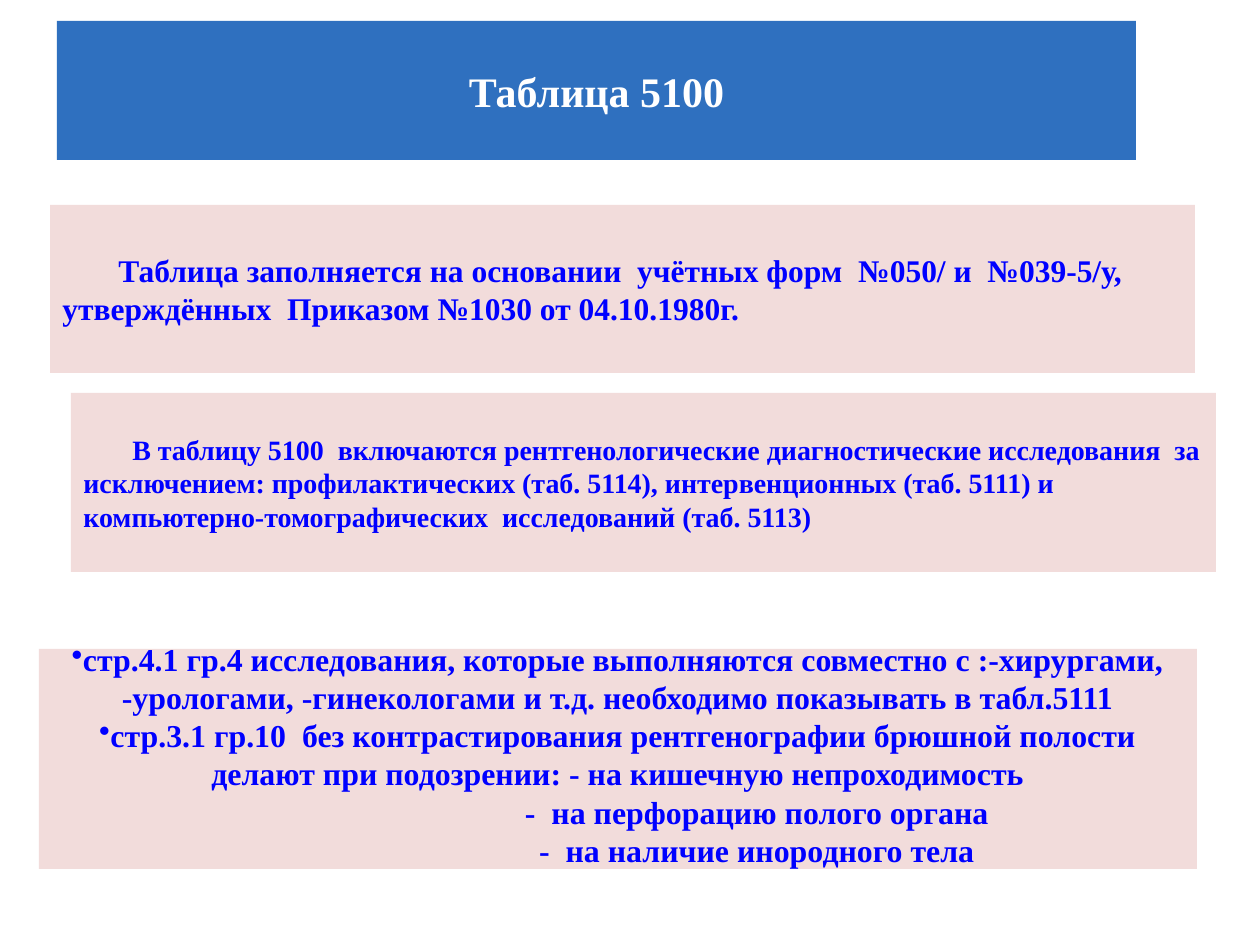
"""Build the slide about filling in table 5100."""
from lxml import etree
from pptx import Presentation
from pptx.dml.color import RGBColor
from pptx.enum.shapes import MSO_SHAPE
from pptx.enum.text import MSO_ANCHOR, PP_ALIGN
from pptx.oxml.ns import qn
from pptx.util import Pt

PX = 914400 // 126
RECTANGLE = MSO_SHAPE.RECTANGLE
MIDDLE = MSO_ANCHOR.MIDDLE
LEFT, CENTER = PP_ALIGN.LEFT, PP_ALIGN.CENTER
FONT = "Times New Roman"
BLUE, PINK, WHITE, TEXT_BLUE = "2F70BF", "F2DCDB", "FFFFFF", "0000FF"


def paint(shape, box, fill):
    shape.left, shape.top, shape.width, shape.height = [n * PX for n in box]
    shape.fill.solid()
    shape.fill.fore_color.rgb = RGBColor.from_string(fill)
    shape.line.fill.background()
    shape.text_frame.word_wrap = True
    shape.text_frame.vertical_anchor = MIDDLE


def write(paragraph, text, size=18, color=TEXT_BLUE, align=LEFT, margin=0, indent=0, bullet=False):
    paragraph.alignment = align
    properties = paragraph._p.get_or_add_pPr()
    properties.set("marL", str(margin * PX))
    properties.set("indent", str(indent * PX))
    if bullet:
        etree.SubElement(properties, qn("a:buChar")).set("char", "•")
    run = paragraph.add_run()
    run.text = text
    run.font.name = FONT
    run.font.size = Pt(size)
    run.font.bold = True
    run.font.color.rgb = RGBColor.from_string(color)


presentation = Presentation()
presentation.slide_width, presentation.slide_height = 1260 * PX, 945 * PX
slide = presentation.slides.add_slide(presentation.slide_layouts[5])

title = slide.shapes.title
paint(title, (57, 21, 1079, 139), BLUE)
write(title.text_frame.paragraphs[0], "Таблица 5100", size=24, color=WHITE, align=CENTER)

source = "Таблица заполняется на основании  учётных форм  №050/ и  №039-5/у,  утверждённых  Приказом №1030 от 04.10.1980г."
scope = (
    "В таблицу 5100  включаются рентгенологические диагностические исследования  за исключением: "
    "профилактических (таб. 5114), интервенционных (таб. 5111) и компьютерно-томографических  исследований (таб. 5113)"
)
joint = (
    "стр.4.1 гр.4 исследования, которые выполняются совместно с :-хирургами, "
    "-урологами, -гинекологами и т.д. необходимо показывать в табл.5111"
)
abdomen = (
    "стр.3.1 гр.10  без контрастирования рентгенографии брюшной полости "
    "делают при подозрении: - на кишечную непроходимость"
)
point = {"size": 18.2, "align": CENTER, "bullet": True}
reason = {"size": 18.2, "align": CENTER, "margin": 278}
panels = [
    ((50, 205, 1145, 168), 6, [(source, {"size": 18, "indent": 56})]),
    ((39, 649, 1158, 220), 16, [
        (joint, point),
        (abdomen, point),
        ("-  на перфорацию полого органа", reason),
        ("-  на наличие инородного тела", reason),
    ]),
    ((71, 393, 1145, 179), 6, [(scope, {"size": 16, "indent": 49})]),
]
for box, bottom, lines in panels:
    panel = slide.shapes.add_shape(RECTANGLE, 0, 0, PX, PX)
    panel.shadow.inherit = False
    paint(panel, box, PINK)
    frame = panel.text_frame
    frame.margin_bottom = bottom * PX
    for index, (text, style) in enumerate(lines):
        paragraph = frame.add_paragraph() if index else frame.paragraphs[0]
        write(paragraph, text, **style)

presentation.save("out.pptx")
